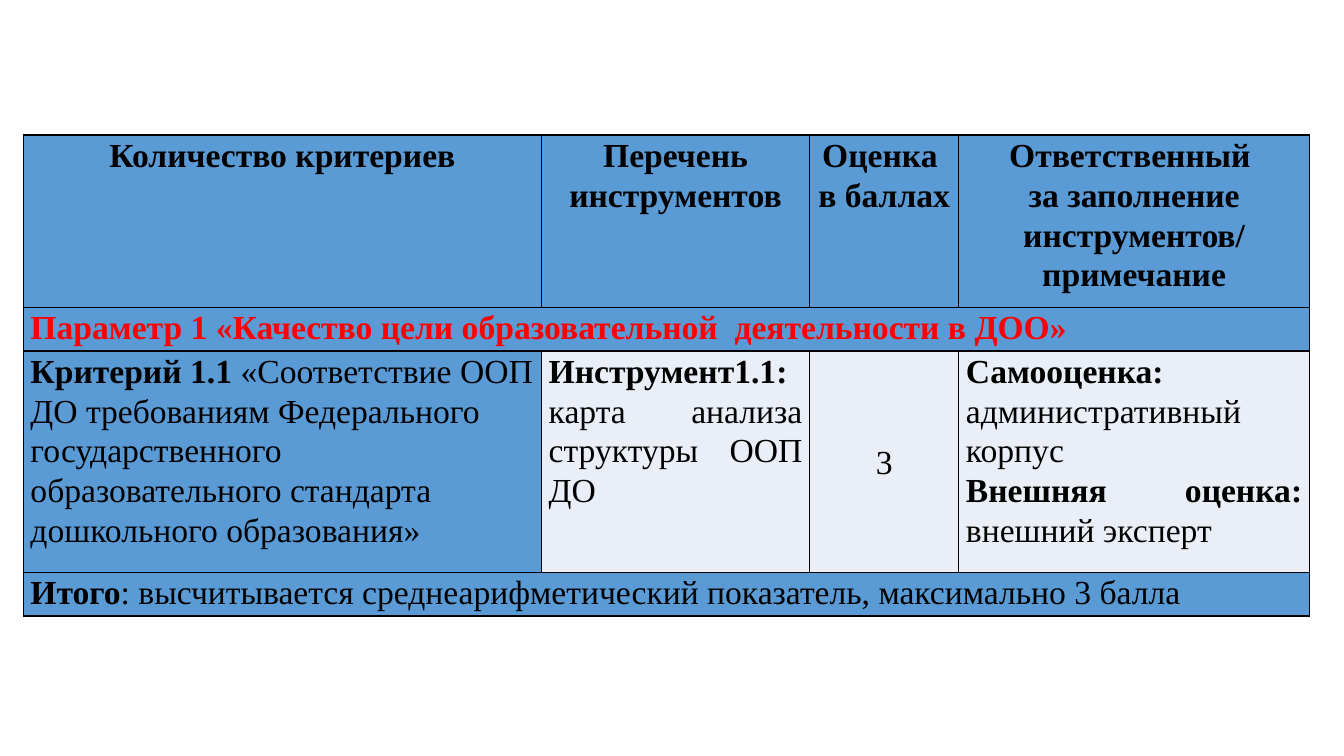
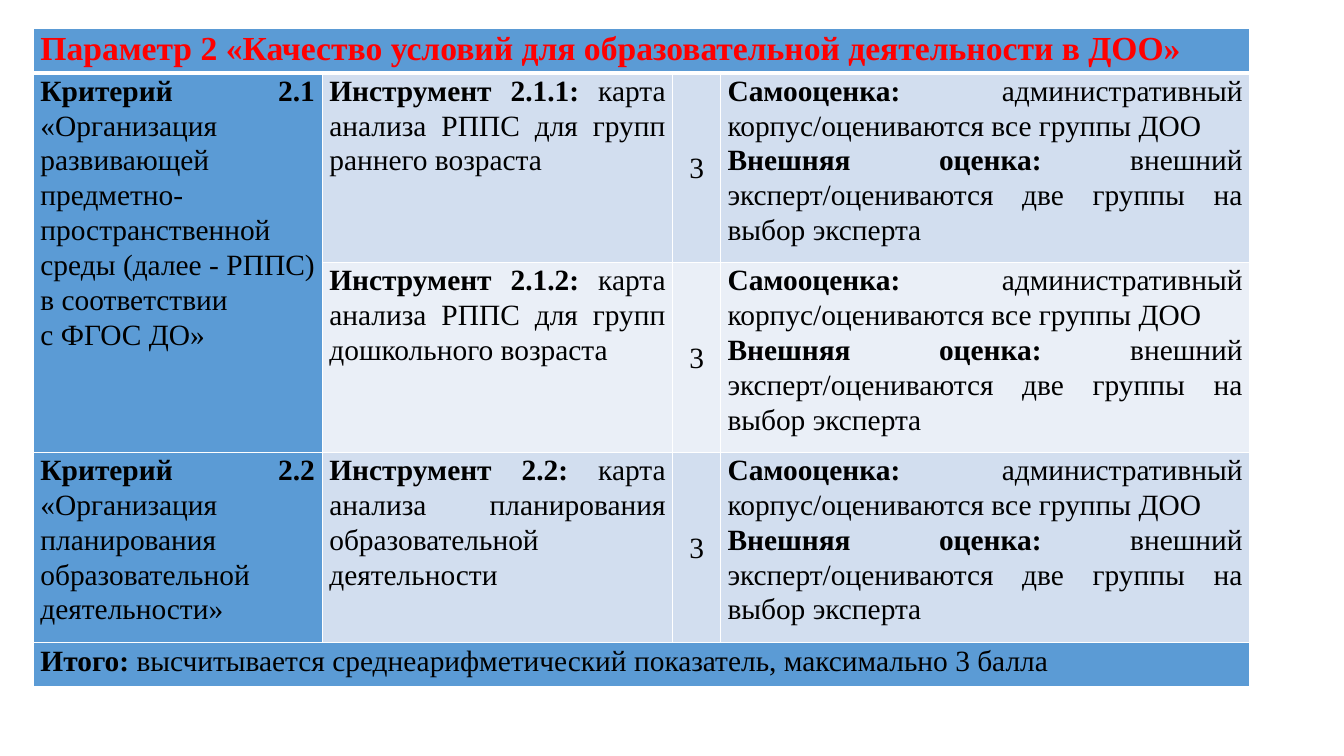
import pptx
import pptx.util
import pptx.dml.color
import pptx.enum.text
import pptx.oxml.ns
from lxml import etree

COLORS = {
    "accent": "5B9BD5",
    "odd_row": "D2DEEF",
    "even_row": "EAEFF7",
    "text": "000000",
    "heading": "FF0000",
    "white": "FFFFFF",
}
ALIGN = pptx.enum.text.PP_ALIGN
MIDDLE = pptx.enum.text.MSO_ANCHOR.MIDDLE
qn = pptx.oxml.ns.qn


class Deck:
    """Style and current slide; lengths are percent of the slide's size."""

    font = "Times New Roman"
    line_spacing = 1.07

    def __init__(self):
        self.prs = pptx.Presentation()
        self.prs.slide_width = pptx.util.Inches(13.33)
        self.prs.slide_height = pptx.util.Inches(7.5)
        self.s = None

    def x(self, share):
        return int(self.prs.slide_width * share / 100)

    def y(self, share):
        return int(self.prs.slide_height * share / 100)

    def add_slide(self):
        self.s = self.prs.slides.add_slide(self.prs.slide_layouts[6])

    def border(self, cell, color, **widths):
        """Draw 1 pt edges, except where a width is given for L, R, T or B."""
        tcPr = cell._tc.get_or_add_tcPr()
        for side in "LRTB":
            width = pptx.util.Pt(widths.get(side, 1))
            ln = etree.SubElement(tcPr, qn(f"a:ln{side}"), w=str(width))
            fill = etree.SubElement(ln, qn("a:solidFill"))
            etree.SubElement(fill, qn("a:srgbClr"), val=COLORS[color])

    def text(self, cell, text, size, color, align):
        """Write one paragraph per line; the part before a bar is bold."""
        tf = cell.text_frame
        tf.word_wrap = True
        for i, line in enumerate(text.split("\n")):
            p = tf.add_paragraph() if i else tf.paragraphs[0]
            p.alignment = align
            p.line_spacing = self.line_spacing
            head, bar, body = line.partition("|")
            parts = [(head, True), (body, False)] if bar else [(line, False)]
            for words, bold in parts:
                if not words:
                    continue
                r = p.add_run()
                r.text = words
                style = {"name": self.font, "size": pptx.util.Pt(size), "bold": bold}
                for key, value in style.items():
                    setattr(r.font, key, value)
                r.font.color.rgb = pptx.dml.color.RGBColor.from_string(COLORS[color])

    def table(self, left, top, cols, heights, rows, line, size,
              first_align=ALIGN.JUSTIFY, first_rule=1):
        """A one-item row spans the table; None continues the cell above."""
        frame = self.s.shapes.add_table(
            len(rows), len(cols), self.x(left), self.y(top),
            self.x(sum(cols)), self.y(sum(heights)))
        table = frame.table
        table.first_row = table.horz_banding = False
        for col, width in zip(table.columns, cols):
            col.width = self.x(width)
        for row, height in zip(table.rows, heights):
            row.height = self.y(height)

        margins = {"margin_left": self.x(0.54), "margin_right": self.x(0.54),
                   "margin_top": 0, "margin_bottom": 0}
        for i, row in enumerate(rows):
            band = len(row) == 1
            for j in range(len(cols)):
                cell = table.cell(i, j)
                self.border(cell, line, B=first_rule if i == 0 else 1)
                stripe = "odd_row" if i % 2 else "even_row"
                fill = "accent" if band or i == 0 or j == 0 else stripe
                cell.fill.solid()
                cell.fill.fore_color.rgb = pptx.dml.color.RGBColor.from_string(COLORS[fill])
                for key, value in margins.items():
                    setattr(cell, key, value)

            if band:
                table.cell(i, 0).merge(table.cell(i, len(cols) - 1))
            for j, text in enumerate(row):
                cell = table.cell(i, j)
                if text is None:
                    table.cell(i - 1, j).merge(cell)
                    continue
                heading = band and text.startswith("Параметр")
                align = ALIGN.JUSTIFY
                if text.isdigit():
                    align = ALIGN.CENTER
                    cell.vertical_anchor = MIDDLE
                elif i == 0 and not band:
                    align = ALIGN.CENTER
                elif j == 0 and not band:
                    align = first_align
                self.text(cell, text, 24 if heading else size,
                          "heading" if heading else "text", align)


def main():
    deck = Deck()

    deck.add_slide()
    deck.table(
        left=1.73, top=17.87, cols=[38.56, 19.95, 11.1, 26.1],
        heights=[22.8, 5.76, 29.3, 5.76], line="text", size=24,
        first_align=ALIGN.LEFT,
        rows=[
            ["Количество критериев|", "Перечень инструментов|",
             "Оценка |\nв баллах|",
             "Ответственный |\nза заполнение инструментов/|\nпримечание|"],
            ["Параметр 1 «Качество цели образовательной  деятельности в ДОО»|"],
            ["Критерий 1.1 |«Соответствие ООП ДО требованиям Федерального "
             "государственного образовательного стандарта дошкольного образования»",
             "Инструмент1.1: |карта анализа структуры ООП ДО",
             "3",
             "Самооценка: |административный корпус \n"
             "Внешняя оценка: |внешний эксперт"],
            ["Итого|: высчитывается среднеарифметический показатель, "
             "максимально 3 балла"],
        ])

    assessors = ("Самооценка: |административный корпус/оцениваются все группы ДОО \n"
                 "Внешняя оценка: |внешний эксперт/оцениваются две группы "
                 "на выбор эксперта")
    deck.add_slide()
    deck.table(
        left=2.47, top=3.75, cols=[21.5, 26.1, 3.53, 39.4],
        heights=[5.87, 25.1, 25.1, 25.2, 5.87], line="white", size=21,
        first_rule=3,
        rows=[
            ["Параметр 2 «Качество условий для образовательной деятельности в ДОО»|"],
            ["Критерий 2.1 |«Организация развивающей предметно-пространственной "
             "среды (далее - РППС) в соответствии \nс ФГОС ДО»",
             "Инструмент 2.1.1: |карта анализа РППС для групп раннего возраста",
             "3", assessors],
            [None,
             "Инструмент 2.1.2:| карта анализа РППС для групп дошкольного возраста",
             "3", assessors],
            ["Критерий 2.2 |«Организация планирования образовательной деятельности»",
             "Инструмент 2.2: |карта анализа планирования образовательной деятельности",
             "3", assessors],
            ["Итого: |высчитывается среднеарифметический показатель, "
             "максимально 3 балла"],
        ])

    deck.prs.save("out.pptx")


if __name__ == "__main__":
    main()
